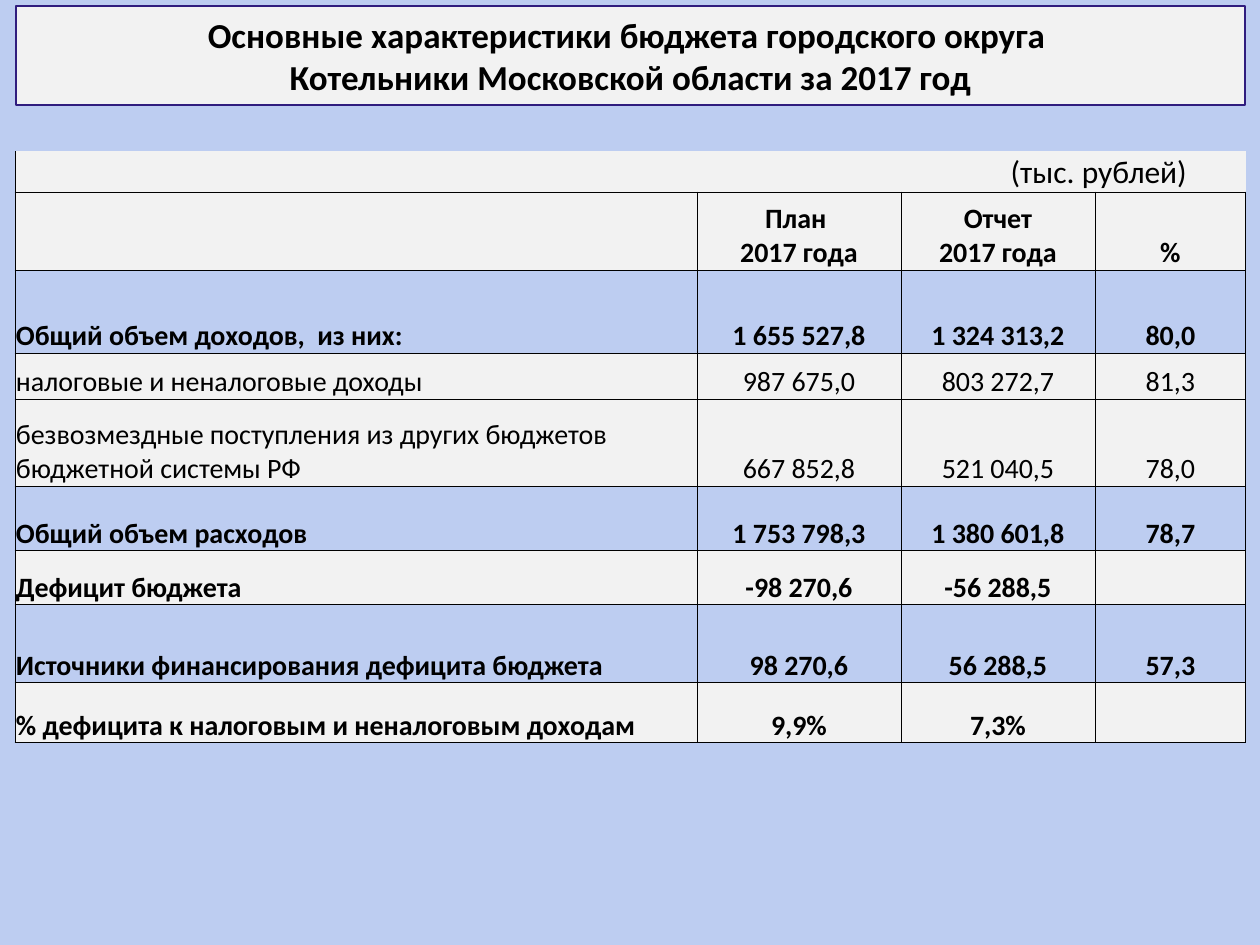
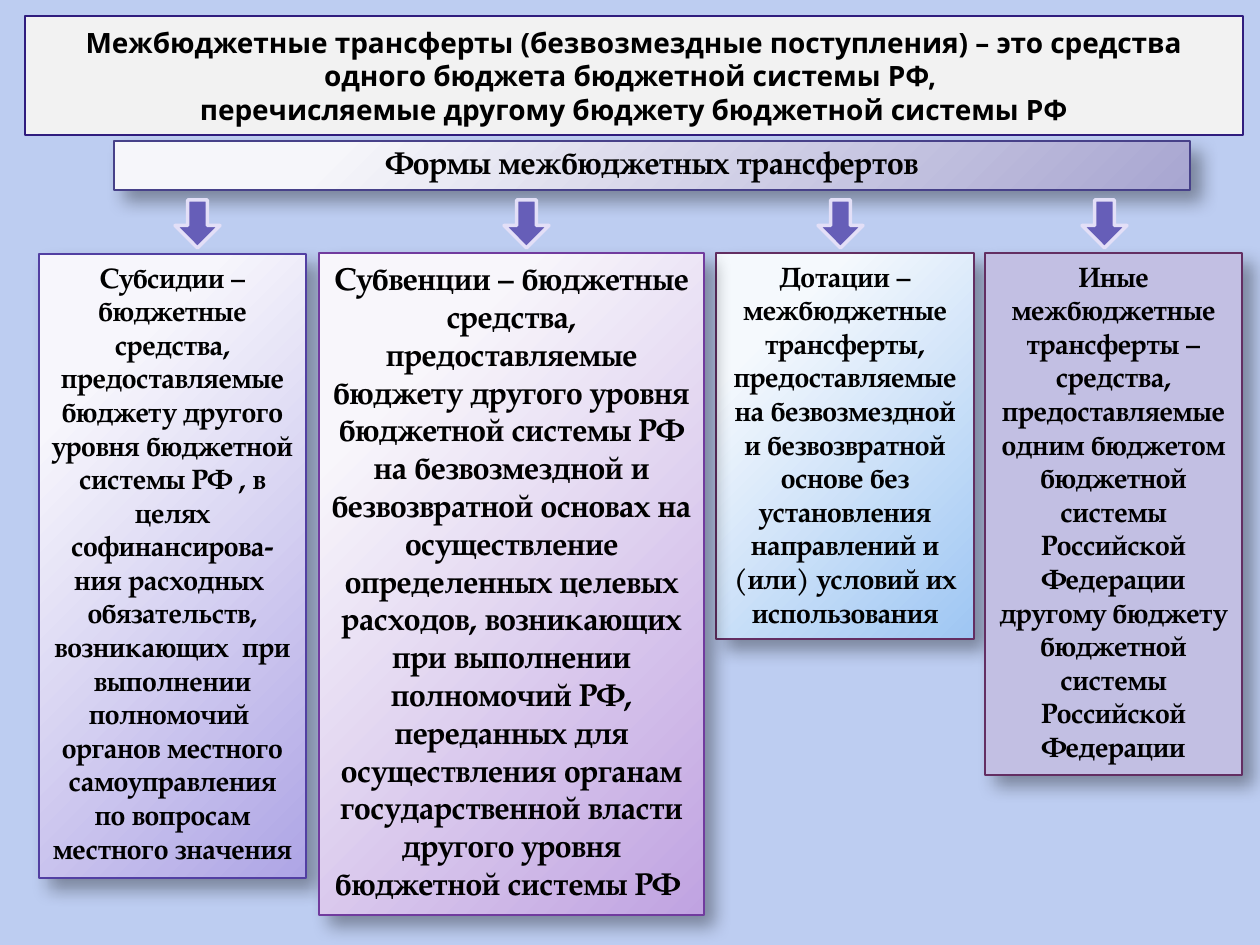
from copy import deepcopy
from pptx import Presentation
from pptx.dml.color import RGBColor
from pptx.enum.shapes import MSO_SHAPE
from pptx.enum.text import MSO_ANCHOR, MSO_AUTO_SIZE, PP_ALIGN
from pptx.oxml import parse_xml
from pptx.oxml.ns import nsdecls, qn
from pptx.util import Emu, Pt

BLACK = RGBColor(0x00, 0x00, 0x00)
SKY = RGBColor(0xBD, 0xCD, 0xF1)
PALE = RGBColor(0xF2, 0xF2, 0xF2)
NAVY = RGBColor(0x30, 0x1D, 0x7E)
PLUM = RGBColor(0x63, 0x2E, 0x62)
ARROW = RGBColor(0x66, 0x5E, 0xB8)
RIM = RGBColor(0xE3, 0xDF, 0xF7)
BODY = "Calibri"
SERIF = "TeX Gyre Pagella"


def px(n):
    return Emu(round(n * 914400 / 126))


def write(frame, text, font=BODY, size=16, bold=True, align=PP_ALIGN.CENTER, space=None):
    for i, line in enumerate(text.split("\n")):
        para = frame.add_paragraph() if i else frame.paragraphs[0]
        para.text = line
        para.alignment = align
        if space:
            para.line_spacing = space
        for run in para.runs:
            run.font.name = font
            run.font.size = Pt(size)
            run.font.bold = bold
            run.font.color.rgb = BLACK
        for gap in para._p.findall(qn("a:br")):
            gap.insert(0, deepcopy(para.runs[0]._r.rPr))


prs = Presentation()
prs.slide_width, prs.slide_height = px(1260), px(945)
back = prs.slide_master.background.fill
back.solid()
back.fore_color.rgb = SKY

titles = [
    ("Основные характеристики бюджета городского округа \vКотельники Московской области за 2017 год",
     BODY, 20, (16, 6, 1229, 99)),
    ("Межбюджетные трансферты (безвозмездные поступления) – это средства одного бюджета "
     "бюджетной системы РФ, \vперечисляемые другому бюджету бюджетной системы РФ",
     "Noto Sans", 16, (25, 16, 1218, 119)),
]
slides = []
for text, font, size, rect in titles:
    slide = prs.slides.add_slide(prs.slide_layouts[5])
    title = slide.shapes.title
    title.left, title.top, title.width, title.height = map(px, rect)
    title.fill.solid()
    title.fill.fore_color.rgb = PALE
    title.line.color.rgb = NAVY
    title.line.width = Pt(0.75)
    frame = title.text_frame
    frame.word_wrap = True
    frame.auto_size = MSO_AUTO_SIZE.NONE
    frame.vertical_anchor = MSO_ANCHOR.MIDDLE
    frame.margin_left = frame.margin_right = px(6)
    frame.margin_top = frame.margin_bottom = 0
    write(frame, text, font=font, size=size)
    slides.append(slide)
budget, grants = slides

rows = [
    (41, PALE, False, ["(тыс. рублей)", "", "", ""]),
    (78, PALE, True, ["", "План \n2017 года", "Отчет\n2017 года", "%"]),
    (83, SKY, True, ["Общий объем доходов,  из них:", "1 655 527,8", "1 324 313,2", "80,0"]),
    (46, PALE, False, ["налоговые и неналоговые доходы", "987 675,0", "803 272,7", "81,3"]),
    (87, PALE, False, ["безвозмездные поступления из других бюджетов  бюджетной системы РФ",
                       "667 852,8", "521 040,5", "78,0"]),
    (65, SKY, True, ["Общий объем расходов", "1 753 798,3", "1 380 601,8", "78,7"]),
    (54, PALE, True, ["Дефицит бюджета", "-98 270,6", "-56 288,5", ""]),
    (78, SKY, True, ["Источники финансирования дефицита бюджета", "98 270,6", "56 288,5", "57,3"]),
    (60, PALE, True, ["% дефицита к налоговым и неналоговым доходам", "9,9%", "7,3%", ""]),
]
widths = [682, 204, 194, 151]
table = budget.shapes.add_table(len(rows), len(widths), px(15), px(151), px(sum(widths)),
                                px(sum(row[0] for row in rows))).table
table.first_row = table.horz_banding = False
for col, width in zip(table.columns, widths):
    col.width = px(width)
table.cell(0, 0).merge(table.cell(0, 3))
for r, (height, tint, bold, texts) in enumerate(rows):
    table.rows[r].height = px(height)
    for c, text in enumerate(texts):
        cell = table.cell(r, c)
        cell.margin_left = cell.margin_right = cell.margin_top = px(1)
        cell.margin_bottom = 0
        cell.vertical_anchor = MSO_ANCHOR.BOTTOM
        for side in "LRTB":
            shown = r > 0 or side == "B" or (side == "L" and c == 0)
            ink = f'<a:solidFill><a:srgbClr val="{BLACK}"/></a:solidFill>' if shown else "<a:noFill/>"
            cell._tc.get_or_add_tcPr().append(parse_xml(
                f'<a:ln{side} {nsdecls("a")} w="{Pt(0.5)}">{ink}</a:ln{side}>'))
        cell.fill.solid()
        cell.fill.fore_color.rgb = tint
        align = PP_ALIGN.RIGHT if r == 0 else PP_ALIGN.CENTER if c else PP_ALIGN.LEFT
        write(cell.text_frame, text, size=16 if r else 18, bold=bold, align=align)
table.cell(0, 0).margin_right = px(59)

boxes = [
    ((114, 141, 1076, 49), ("F6F6FA", "A8A6D1"), RGBColor(0x47, 0x41, 0x89), 18,
     "Формы межбюджетных трансфертов"),
    ((39, 254, 267, 624), ("F7F6FC", "AEA5E5"), RGBColor(0x52, 0x3F, 0xA2), 16,
     "Субсидии – бюджетные средства, предоставляемые бюджету другого уровня бюджетной системы РФ , "
     "в целях софинансирова-ния расходных  обязательств, возникающих  при выполнении полномочий  "
     "органов местного самоуправления по вопросам местного значения"),
    ((716, 253, 258, 386), ("F5F9FD", "9EC6F3"), PLUM, 16,
     "Дотации – межбюджетные трансферты, предоставляемые на безвозмездной и безвозвратной основе "
     "без установления направлений и (или) условий их использования"),
    ((319, 253, 385, 662), ("F8F6FB", "C0A3E1"), RGBColor(0x71, 0x3B, 0x9E), 18,
     "Субвенции – бюджетные средства, предоставляемые бюджету другого уровня бюджетной системы РФ "
     "на безвозмездной и безвозвратной основах на осуществление определенных целевых расходов, "
     "возникающих при выполнении полномочий РФ, переданных для осуществления органам "
     "государственной власти другого уровня бюджетной системы РФ "),
    ((985, 253, 257, 522), ("C2BFE3",), PLUM, 16,
     "Иные межбюджетные трансферты – средства, предоставляемые одним бюджетом бюджетной системы "
     "Российской Федерации другому бюджету бюджетной системы Российской Федерации"),
]
for n, (rect, tints, edge, size, text) in enumerate(boxes):
    box = grants.shapes.add_shape(MSO_SHAPE.RECTANGLE, *map(px, rect))
    box.line.color.rgb = edge
    box.line.width = Pt(0.75)
    if len(tints) == 2:
        box.fill.gradient()
        for stop, tint, place in zip(box.fill.gradient_stops, tints, (0.2, 1)):
            stop.color.rgb = RGBColor.from_string(tint)
            stop.position = place
        line = box._element.spPr.find(".//" + qn("a:lin"))
        line.getparent().replace(line, parse_xml(
            f'<a:path {nsdecls("a")} path="circle">'
            '<a:fillToRect l="-15000" t="-15000" r="115000" b="115000"/></a:path>'))
    else:
        box.fill.solid()
        box.fill.fore_color.rgb = RGBColor.from_string(tints[0])
    box.shadow.inherit = False
    box._element.spPr.find(qn("a:effectLst")).append(parse_xml(
        f'<a:outerShdw {nsdecls("a")} blurRad="{Pt(10.2)}" dist="{Pt(8)}" dir="2700000" '
        f'algn="tl" rotWithShape="0"><a:srgbClr val="{BLACK}"><a:alpha val="35000"/>'
        '</a:srgbClr></a:outerShdw>'))
    frame = box.text_frame
    frame.word_wrap = True
    frame.vertical_anchor = MSO_ANCHOR.TOP
    frame.auto_size = MSO_AUTO_SIZE.SHAPE_TO_FIT_TEXT if n else MSO_AUTO_SIZE.NONE
    write(frame, text, font=SERIF, size=size, space=None if n else 0.9)

for left in (175, 504, 818, 1082):
    arrow = grants.shapes.add_shape(MSO_SHAPE.DOWN_ARROW, px(left), px(200), px(45), px(48))
    arrow.adjustments[0], arrow.adjustments[1] = 0.44, 0.5
    arrow.fill.solid()
    arrow.fill.fore_color.rgb = ARROW
    arrow.line.color.rgb = RIM
    arrow.line.width = Pt(2)
    arrow.shadow.inherit = False

prs.save("out.pptx")
